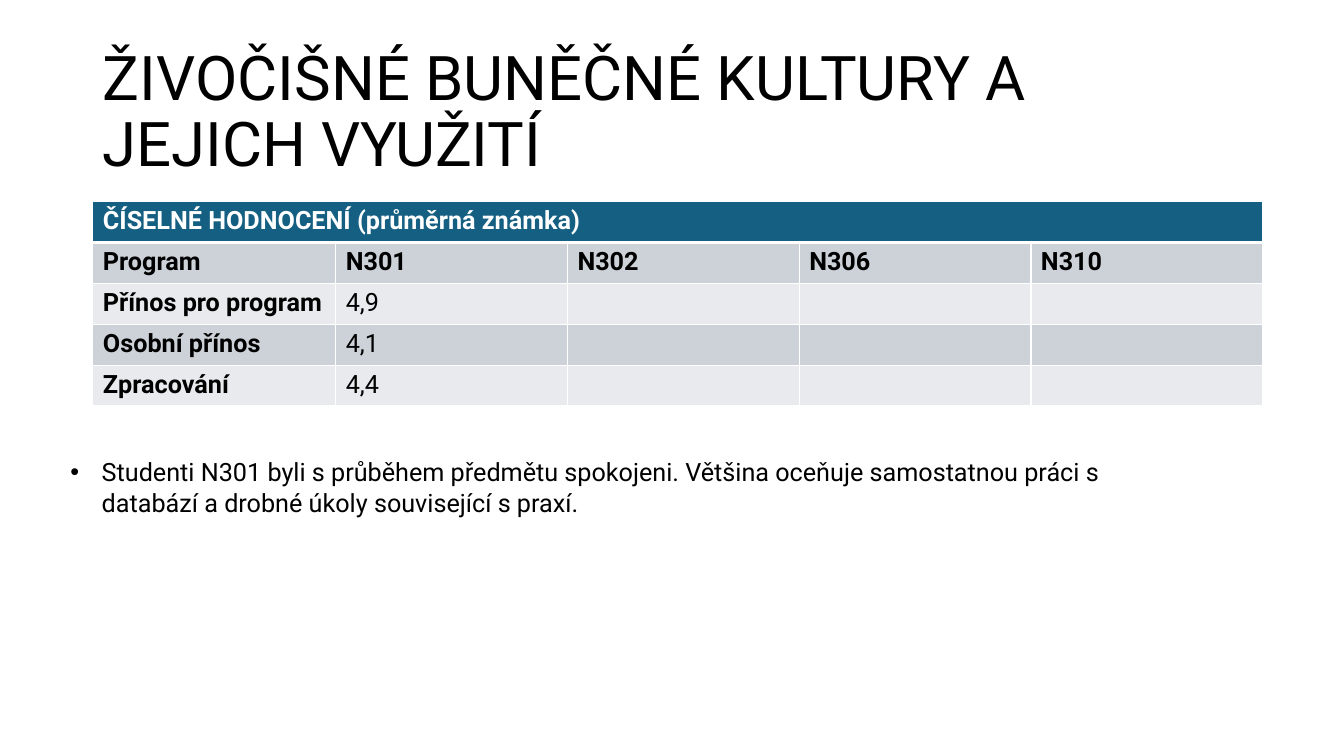
import dataclasses
import typing

import lxml.etree
import pptx
import pptx.dml.color
import pptx.enum.text
import pptx.oxml.ns
import pptx.util

Cm = pptx.util.Cm
Pt = pptx.util.Pt

FONT = "Roboto"
BLACK, WHITE, HEADER_FILL = "000000", "FFFFFF", "156082"
BAND_FILLS = ("CCD2D8", "E8EAED")
ROW_HEIGHT = Cm(1.03)
COLUMN_WIDTHS = (Cm(6.12),) + (Cm(5.84),) * 4

TITLE = "ŽIVOČIŠNÉ BUNĚČNÉ KULTURY A JEJICH VYUŽITÍ"
COMMENT = (
    "Studenti N301 byli s průběhem předmětu spokojeni. Většina oceňuje "
    "samostatnou práci s databází a drobné úkoly související s praxí."
)
TABLE_HEADING = "ČÍSELNÉ HODNOCENÍ (průměrná známka)"


@dataclasses.dataclass(frozen=True)
class RatingRow:
    label: str
    values: tuple[str, ...]
    bold_values: bool = False


RATING_ROWS = (
    RatingRow("Program", ("N301", "N302", "N306", "N310"), bold_values=True),
    RatingRow("Přínos pro program", ("4,9", "", "", "")),
    RatingRow("Osobní přínos", ("4,1", "", "", "")),
    RatingRow("Zpracování", ("4,4", "", "", "")),
)


def set_all(target: typing.Any, values: dict[str, typing.Any]) -> None:
    for name, value in values.items():
        setattr(target, name, value)


def set_color(color_format: typing.Any, color: str) -> None:
    color_format.rgb = pptx.dml.color.RGBColor.from_string(color)


def write_text(para: typing.Any, text: str, size: float, color: str = BLACK, bold: bool = False) -> None:
    span = para.add_run()
    span.text = text
    set_all(span.font, {"name": FONT, "size": Pt(size), "bold": bold})
    set_color(span.font.color, color)


def add_borders(cell: typing.Any, bottom_width: float = 1) -> None:
    properties = cell._tc.get_or_add_tcPr()
    qn = pptx.oxml.ns.qn
    for side, width in {"L": 1, "R": 1, "T": 1, "B": bottom_width}.items():
        line = lxml.etree.SubElement(properties, qn(f"a:ln{side}"), w=str(Pt(width)))
        fill = lxml.etree.SubElement(line, qn("a:solidFill"))
        lxml.etree.SubElement(fill, qn("a:srgbClr"), val=WHITE)


def format_cell(cell: typing.Any, fill: str, bottom_width: float = 1) -> None:
    add_borders(cell, bottom_width)
    cell.fill.solid()
    set_color(cell.fill.fore_color, fill)


def add_rating_table(page: typing.Any) -> None:
    row_count = len(RATING_ROWS) + 1
    table = page.shapes.add_table(
        row_count, len(COLUMN_WIDTHS), Cm(2.34), Cm(5.08),
        sum(COLUMN_WIDTHS), ROW_HEIGHT * row_count,
    ).table
    for column, width in zip(table.columns, COLUMN_WIDTHS):
        column.width = width

    heading = table.cell(0, 0)
    heading.merge(table.cell(0, len(COLUMN_WIDTHS) - 1))
    for cell in table.rows[0].cells:
        format_cell(cell, HEADER_FILL, bottom_width=3)
    write_text(heading.text_frame.paragraphs[0], TABLE_HEADING, 18, WHITE, bold=True)

    for row_index, row in enumerate(RATING_ROWS):
        for column_index, text in enumerate((row.label, *row.values)):
            cell = table.cell(row_index + 1, column_index)
            format_cell(cell, BAND_FILLS[row_index % 2])
            if text:
                bold = column_index == 0 or row.bold_values
                write_text(cell.text_frame.paragraphs[0], text, 18, bold=bold)


def add_title(page: typing.Any) -> None:
    box = page.shapes.title
    set_all(box, {"left": Cm(2.34), "top": Cm(1.02), "width": Cm(29.21), "height": Cm(3.68)})
    set_all(box.text_frame, {
        "word_wrap": True,
        "auto_size": pptx.enum.text.MSO_AUTO_SIZE.NONE,
        "vertical_anchor": pptx.enum.text.MSO_ANCHOR.MIDDLE,
    })
    para = box.text_frame.paragraphs[0]
    set_all(para, {
        "alignment": pptx.enum.text.PP_ALIGN.LEFT,
        "line_spacing": 0.9,
        "space_before": Pt(0),
    })
    write_text(para, TITLE, 44)


def add_comment(page: typing.Any) -> None:
    box = page.placeholders[1]
    set_all(box, {"left": Cm(1.52), "top": Cm(11.38), "width": Cm(26.92), "height": Cm(1.8)})
    set_all(box.text_frame, {
        "word_wrap": True,
        "auto_size": pptx.enum.text.MSO_AUTO_SIZE.SHAPE_TO_FIT_TEXT,
        "vertical_anchor": pptx.enum.text.MSO_ANCHOR.TOP,
    })
    para = box.text_frame.paragraphs[0]
    set_all(para, {"line_spacing": 1.0, "space_before": Pt(0)})
    properties = para._p.get_or_add_pPr()
    for name, indent in {"marL": Cm(0.79), "indent": Cm(-0.79)}.items():
        properties.set(name, str(indent))
    lxml.etree.SubElement(properties, pptx.oxml.ns.qn("a:buFont"), typeface="Arial")
    lxml.etree.SubElement(properties, pptx.oxml.ns.qn("a:buChar"), char="•")
    write_text(para, COMMENT, 18)


def main() -> None:
    deck = pptx.Presentation()
    set_all(deck, {"slide_width": Cm(33.87), "slide_height": Cm(19.05)})
    page = deck.slides.add_slide(deck.slide_layouts[1])
    add_title(page)
    add_rating_table(page)
    add_comment(page)
    deck.save("out.pptx")


if __name__ == "__main__":
    main()
